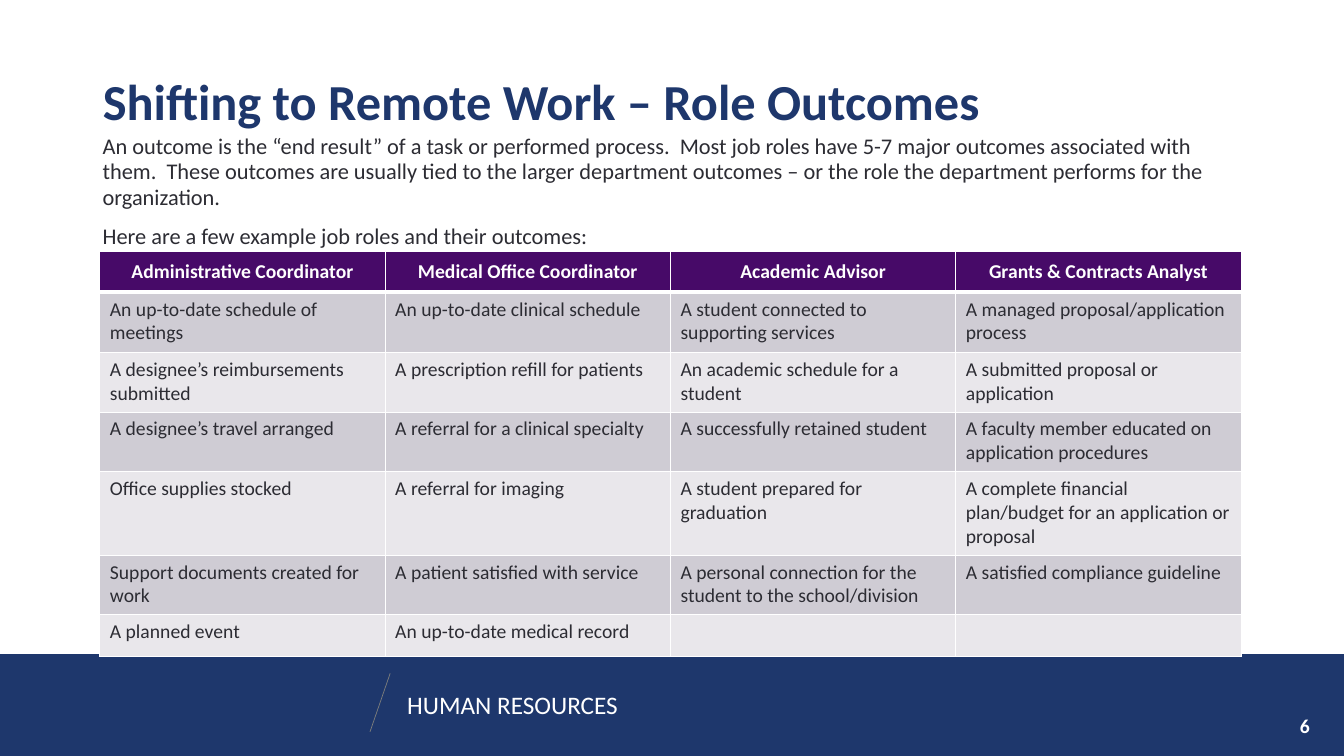
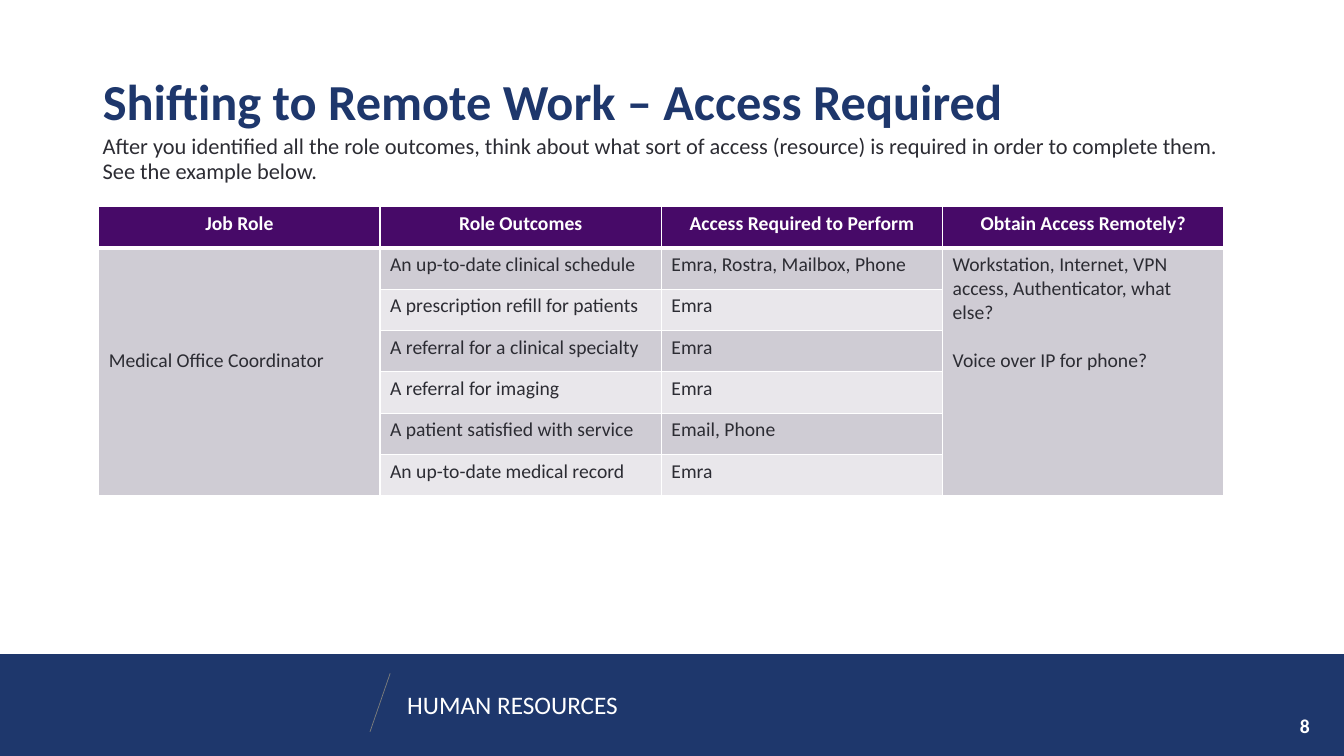
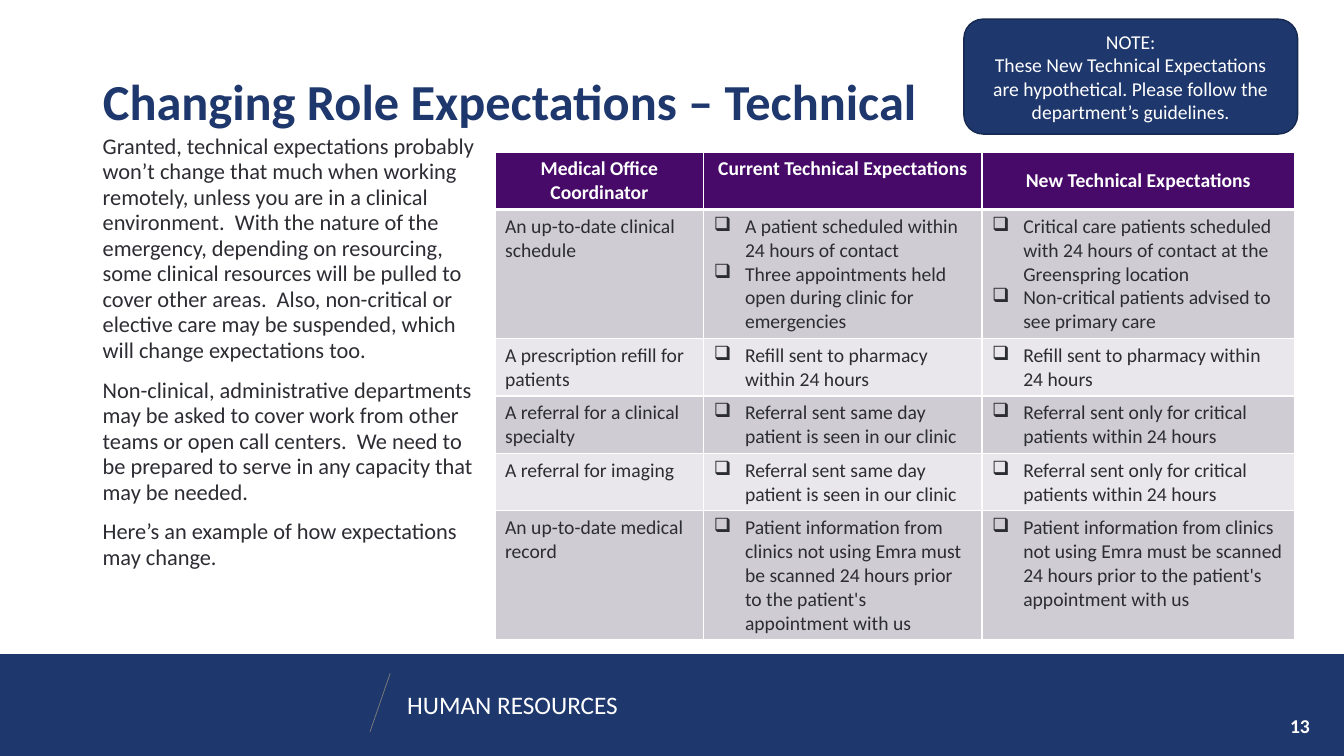
"""Build three slides about moving job roles to remote work."""
from dataclasses import dataclass, field

from lxml import etree
from pptx import Presentation
from pptx.dml.color import RGBColor
from pptx.enum import shapes, text
from pptx.oxml import ns
from pptx.util import Inches, Pt

FONT = "Calibri"
NAVY = RGBColor(0x1E, 0x37, 0x6C)
DARK_NAVY = RGBColor(0x16, 0x29, 0x50)
PURPLE = RGBColor(0x47, 0x0A, 0x68)
INK = RGBColor(0x2C, 0x2C, 0x33)
GREY = RGBColor(0x7E, 0x7E, 0x7C)
WHITE = RGBColor(0xFF, 0xFF, 0xFF)
BAND_FILLS = (RGBColor(0xCF, 0xCC, 0xD4), RGBColor(0xE9, 0xE7, 0xEB))

LEFT, CENTER, RIGHT = text.PP_ALIGN.LEFT, text.PP_ALIGN.CENTER, text.PP_ALIGN.RIGHT
TOP, MIDDLE = text.MSO_ANCHOR.TOP, text.MSO_ANCHOR.MIDDLE


@dataclass(frozen=True)
class Style:
    """Character and paragraph settings of a piece of text."""

    size: float
    color: RGBColor
    bold: bool = False
    align: text.PP_ALIGN = LEFT
    line_spacing: float = 1.0
    gap: float = 0


TITLE = Style(36, NAVY, bold=True, line_spacing=0.9)
BODY = Style(16, INK, line_spacing=0.95, gap=10)
FOOTER = Style(18, WHITE)
PAGE_NUMBER = Style(14, WHITE, bold=True, align=RIGHT)
NOTE = Style(14, WHITE, align=CENTER)
HEADER = Style(14, WHITE, bold=True, align=CENTER)
CELL = Style(14, INK)
SPACED_CELL = Style(14, INK, gap=17)


@dataclass(frozen=True)
class Grid:
    """A table; merged maps each column joined below the header to its top margin."""

    left: float
    top: float
    widths: tuple[float, ...]
    heights: tuple[float, ...]
    rows: tuple[tuple[str, ...], ...]
    middle_headers: tuple[int, ...] = ()
    bulleted: bool = False
    merged: dict[int, float] = field(default_factory=dict)


@dataclass(frozen=True)
class Page:
    """The content of one slide."""

    number: int
    title: str
    body: str
    grid: Grid
    body_width: float = 11.49
    note: str = ""


PAGES = (
    Page(
        6,
        "Shifting to Remote Work – Role Outcomes",
        "An outcome is the “end result” of a task or performed process.  Most job roles have "
        "5-7 major outcomes associated with them.  These outcomes are usually tied to the larger "
        "department outcomes – or the role the department performs for the organization.\n"
        "Here are a few example job roles and their outcomes:",
        Grid(
            0.99, 2.49, (2.83,) * 4, (0.41, 0.6, 0.59, 0.59, 0.83, 0.59, 0.41),
            (
                ("Administrative Coordinator", "Medical Office Coordinator",
                 "Academic Advisor", "Grants & Contracts Analyst"),
                ("An up-to-date schedule of meetings", "An up-to-date clinical schedule",
                 "A student connected to supporting services",
                 "A managed proposal/application process"),
                ("A designee’s reimbursements submitted", "A prescription refill for patients",
                 "An academic schedule for a student", "A submitted proposal or application"),
                ("A designee’s travel arranged", "A referral for a clinical specialty",
                 "A successfully retained student",
                 "A faculty member educated on application procedures"),
                ("Office supplies stocked", "A referral for imaging",
                 "A student prepared for graduation",
                 "A complete financial plan/budget for an application or proposal"),
                ("Support documents created for work", "A patient satisfied with service",
                 "A personal connection for the student to the school/division",
                 "A satisfied compliance guideline"),
                ("A planned event", "An up-to-date medical record", "", ""),
            ),
            middle_headers=(0, 1, 2, 3),
        ),
    ),
    Page(
        8,
        "Shifting to Remote Work – Access Required",
        "After you identified all the role outcomes, think about what sort of access (resource) "
        "is required in order to complete them.  See the example below.",
        Grid(
            0.98, 2.05, (2.79,) * 4, (0.41,) * 7,
            (
                ("Job Role", "Role Outcomes", "Access Required to Perform",
                 "Obtain Access Remotely?"),
                ("Medical Office Coordinator", "An up-to-date clinical schedule",
                 "Emra, Rostra, Mailbox, Phone",
                 "Workstation, Internet, VPN access, Authenticator, what else?\n"
                 "Voice over IP for phone?"),
                ("", "A prescription refill for patients", "Emra", ""),
                ("", "A referral for a clinical specialty", "Emra", ""),
                ("", "A referral for imaging", "Emra", ""),
                ("", "A patient satisfied with service", "Email, Phone", ""),
                ("", "An up-to-date medical record", "Emra", ""),
            ),
            merged={0: 1.0, 3: 0.05},
        ),
    ),
    Page(
        13,
        "Changing Role Expectations – Technical",
        "Granted, technical expectations probably won’t change that much when working remotely, "
        "unless you are in a clinical environment.  With the nature of the emergency, depending "
        "on resourcing, some clinical resources will be pulled to cover other areas.  Also, "
        "non-critical or elective care may be suspended, which will change expectations too.\n"
        "Non-clinical, administrative departments may be asked to cover work from other teams or "
        "open call centers.  We need to be prepared to serve in any capacity that may be needed.\n"
        "Here’s an example of how expectations may change.",
        Grid(
            4.91, 1.51, (2.07, 2.76, 3.1), (0.57, 1.28, 0.57, 0.57, 0.57, 1.28),
            (
                ("Medical Office Coordinator", "Current Technical Expectations",
                 "New Technical Expectations"),
                ("An up-to-date clinical schedule",
                 "A patient scheduled within 24 hours of contact\n"
                 "Three appointments held open during clinic for emergencies",
                 "Critical care patients scheduled with 24 hours of contact at the Greenspring "
                 "location\nNon-critical patients advised to see primary care"),
                ("A prescription refill for patients", "Refill sent to pharmacy within 24 hours",
                 "Refill sent to pharmacy within 24 hours"),
                ("A referral for a clinical specialty",
                 "Referral sent same day patient is seen in our clinic",
                 "Referral sent only for critical patients within 24 hours"),
                ("A referral for imaging", "Referral sent same day patient is seen in our clinic",
                 "Referral sent only for critical patients within 24 hours"),
                ("An up-to-date medical record",
                 "Patient information from clinics not using Emra must be scanned 24 hours prior "
                 "to the patient's appointment with us",
                 "Patient information from clinics not using Emra must be scanned 24 hours prior "
                 "to the patient's appointment with us"),
            ),
            middle_headers=(2,),
            bulleted=True,
        ),
        body_width=3.89,
        note="NOTE:\nThese New Technical Expectations\n"
             "are hypothetical. Please follow the department’s guidelines.",
    ),
)


def add_bullet(paragraph) -> None:
    """Give a paragraph a hanging check box."""
    properties = paragraph._p.get_or_add_pPr()
    properties.set("marL", str(Inches(0.31)))
    properties.set("indent", str(-Inches(0.31)))
    etree.SubElement(properties, ns.qn("a:buChar"), char="❑")


def write(frame, content: str, style: Style, bulleted: bool = False) -> None:
    """Write each line of the content as one styled paragraph."""
    frame.word_wrap = True
    for index, line in enumerate(content.split("\n")):
        paragraph = frame.add_paragraph() if index else frame.paragraphs[0]
        paragraph.alignment = style.align
        paragraph.line_spacing = style.line_spacing
        paragraph.space_before = Pt(style.gap if index else 0)
        if bulleted:
            add_bullet(paragraph)
        if line:
            run = paragraph.add_run()
            run.text = line
            run.font.name = FONT
            run.font.size = Pt(style.size)
            run.font.bold = style.bold
            run.font.color.rgb = style.color


def add_text(slide, left: float, top: float, width: float, height: float,
             content: str, style: Style, anchor: text.MSO_ANCHOR = TOP) -> None:
    """Add a text box."""
    box = slide.shapes.add_textbox(Inches(left), Inches(top), Inches(width), Inches(height))
    box.text_frame.vertical_anchor = anchor
    write(box.text_frame, content, style)


def add_block(slide, kind: shapes.MSO_SHAPE, left: float, top: float,
              width: float, height: float):
    """Add a flat navy shape without an outline."""
    shape = slide.shapes.add_shape(
        kind, Inches(left), Inches(top), Inches(width), Inches(height))
    shape.shadow.inherit = False
    shape.fill.solid()
    shape.fill.fore_color.rgb = NAVY
    shape.line.fill.background()
    return shape


def add_footer(slide, number: int) -> None:
    """Draw the footer band, its slash, the department and the page number."""
    add_block(slide, shapes.MSO_SHAPE.RECTANGLE, 0, 6.49, 13.33, 1.01)
    add_text(slide, 3.94, 6.79, 3.45, 0.4, "HUMAN RESOURCES", FOOTER)
    slash = slide.shapes.add_connector(
        shapes.MSO_CONNECTOR.STRAIGHT, Inches(3.67), Inches(7.26), Inches(3.87), Inches(6.68))
    slash.line.color.rgb = GREY
    slash.line.width = Pt(0.5)
    etree.SubElement(slash.element.spPr, ns.qn("a:effectLst"))
    add_text(slide, 11.74, 7, 1.35, 0.4, str(number), PAGE_NUMBER, MIDDLE)


def add_title(slide, content: str) -> None:
    """Place and fill the title placeholder."""
    title = slide.shapes.title
    title.left, title.top = Inches(0.92), Inches(0.4)
    title.width, title.height = Inches(11.49), Inches(1.27)
    title.text_frame.auto_size = text.MSO_AUTO_SIZE.NONE
    title.text_frame.vertical_anchor = MIDDLE
    write(title.text_frame, content, TITLE)


def add_borders(cell, row: int) -> None:
    """Outline a cell in white, with a heavier rule under the header."""
    properties = cell._tc.get_or_add_tcPr()
    widths = {"lnL": 1, "lnR": 1, "lnT": 3 if row == 1 else 1, "lnB": 1 if row else 3}
    for tag, width in widths.items():
        line = etree.SubElement(properties, ns.qn(f"a:{tag}"), w=str(Pt(width)))
        fill = etree.SubElement(line, ns.qn("a:solidFill"))
        etree.SubElement(fill, ns.qn("a:srgbClr"), val=str(WHITE))


def add_grid(slide, grid: Grid) -> None:
    """Draw a banded table with a purple header."""
    table = slide.shapes.add_table(
        len(grid.heights), len(grid.widths), Inches(grid.left), Inches(grid.top),
        Inches(sum(grid.widths)), Inches(sum(grid.heights))).table
    table.first_row = table.horz_banding = False
    for column, width in enumerate(grid.widths):
        table.columns[column].width = Inches(width)
    for row, height in enumerate(grid.heights):
        table.rows[row].height = Inches(height)
        for column, content in enumerate(grid.rows[row]):
            cell = table.cell(row, column)
            add_borders(cell, row)
            cell.fill.solid()
            cell.fill.fore_color.rgb = BAND_FILLS[(row - 1) % 2] if row else PURPLE
            if row == 0:
                cell.vertical_anchor = MIDDLE if column in grid.middle_headers else TOP
                write(cell.text_frame, content, HEADER)
            else:
                style = SPACED_CELL if column in grid.merged else CELL
                write(cell.text_frame, content, style, grid.bulleted and column > 0)
    for column, margin in grid.merged.items():
        origin = table.cell(1, column)
        origin.merge(table.cell(len(grid.heights) - 1, column))
        origin.margin_top = Inches(margin)


def add_note(slide, content: str) -> None:
    """Draw the rounded note in the top right corner."""
    note = add_block(slide, shapes.MSO_SHAPE.ROUNDED_RECTANGLE, 9.56, 0.19, 3.31, 1.14)
    note.line.color.rgb = DARK_NAVY
    note.line.width = Pt(1)
    note.text_frame.vertical_anchor = MIDDLE
    write(note.text_frame, content, NOTE)


def add_page(presentation, page: Page) -> None:
    """Build one slide."""
    slide = presentation.slides.add_slide(presentation.slide_layouts.get_by_name("Title Only"))
    add_footer(slide, page.number)
    add_title(slide, page.title)
    add_text(slide, 0.92, 1.28, page.body_width, 4.16, page.body, BODY)
    add_grid(slide, page.grid)
    if page.note:
        add_note(slide, page.note)


def main() -> None:
    """Build and save the presentation."""
    presentation = Presentation()
    presentation.slide_width = Inches(13.33)
    presentation.slide_height = Inches(7.5)
    for page in PAGES:
        add_page(presentation, page)
    presentation.save("out.pptx")


if __name__ == "__main__":
    main()
